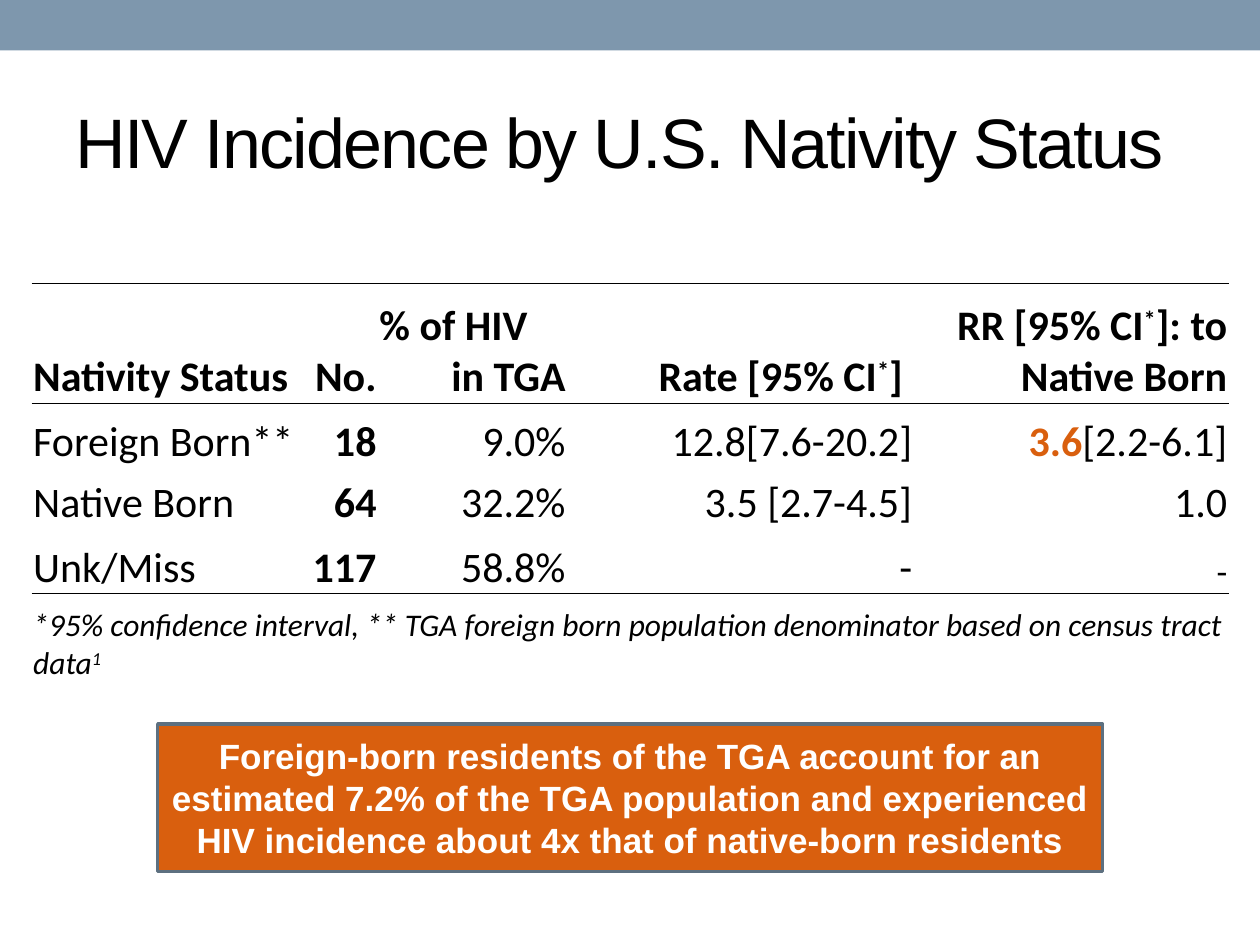
import pptx
import pptx.dml.color
import pptx.enum.shapes
import pptx.enum.text
import pptx.oxml.ns
import pptx.util
from lxml import etree

Cm = pptx.util.Cm
Pt = pptx.util.Pt
RGBColor = pptx.dml.color.RGBColor
Align = pptx.enum.text.PP_ALIGN
Anchor = pptx.enum.text.MSO_ANCHOR
qn = pptx.oxml.ns.qn

BLACK = RGBColor(0x00, 0x00, 0x00)
WHITE = RGBColor(0xFF, 0xFF, 0xFF)
ORANGE = RGBColor(0xD9, 0x5F, 0x0E)
BAND_BLUE = RGBColor(0x7E, 0x97, 0xAD)
OUTLINE_BLUE = RGBColor(0x5D, 0x70, 0x80)

SUPER = "superscript"
HIGHLIGHT = "highlight"

COLUMN_WIDTHS = [5.51, 1.47, 3.81, 6.99, 6.35]
ROW_HEIGHTS = [2.41, 1.3, 1.24, 1.3, 1.8]
RULED_BOUNDARIES = {0, 1, 4}
HEADER = [
    "Nativity Status",
    "No.",
    "% of HIV\nin TGA",
    [("Rate [95% CI", None), ("*", SUPER), ("] ", None)],
    [("RR [95% CI", None), ("*", SUPER), ("]: to Native Born", None)],
]
ROWS = [
    ["Foreign Born**", "18", "9.0%", "12.8[7.6-20.2]",
     [("3.6", HIGHLIGHT), ("[2.2-6.1]", None)]],
    ["Native Born", "64", "32.2%", "3.5 [2.7-4.5]", "1.0"],
    ["Unk/Miss", "117", "58.8%", "-", "-"],
]
FOOTNOTE = [
    ("*95% confidence interval, ** TGA foreign born population "
     "denominator based on census tract data", None),
    ("1", SUPER),
]


class SlideBuilder:
    heading_font = "Arial"
    table_font = "Calibri"

    def __init__(self, slide):
        self.slide = slide

    def style(self, run, font, size, color=BLACK, bold=False, italic=False):
        run.font.name = font
        run.font.size = Pt(size)
        run.font.color.rgb = color
        run.font.bold = bold
        run.font.italic = italic

    def box(self, left, top, width, height, fill, line=None):
        shape = self.slide.shapes.add_shape(
            pptx.enum.shapes.MSO_SHAPE.RECTANGLE,
            Cm(left), Cm(top), Cm(width), Cm(height))
        shape.shadow.inherit = False
        shape.fill.solid()
        shape.fill.fore_color.rgb = fill
        if line is None:
            shape.line.fill.background()
        else:
            shape.line.color.rgb = line
            shape.line.width = Pt(2)
        return shape

    def title(self, text, left, top, width, height):
        text_frame = self.slide.shapes.add_textbox(
            Cm(left), Cm(top), Cm(width), Cm(height)).text_frame
        text_frame.word_wrap = True
        text_frame.vertical_anchor = Anchor.MIDDLE
        text_frame.text = text
        run = text_frame.paragraphs[0].runs[0]
        self.style(run, self.heading_font, 40)
        run.font._element.set("spc", "-100")

    def callout(self, text, left, top, width, height):
        shape = self.box(left, top, width, height, ORANGE, OUTLINE_BLUE)
        text_frame = shape.text_frame
        text_frame.word_wrap = True
        text_frame.vertical_anchor = Anchor.MIDDLE
        text_frame.text = text
        paragraph = text_frame.paragraphs[0]
        paragraph.alignment = Align.CENTER
        self.style(paragraph.runs[0], self.heading_font, 20, WHITE, True)

    def borders(self, cell, row):
        properties = cell._tc.get_or_add_tcPr()
        ruled = {"L": False, "R": False,
                 "T": row in RULED_BOUNDARIES,
                 "B": row + 1 in RULED_BOUNDARIES}
        for side, visible in ruled.items():
            line = etree.SubElement(properties, qn("a:ln" + side), w="6350")
            if visible:
                fill = etree.SubElement(line, qn("a:solidFill"))
                etree.SubElement(fill, qn("a:srgbClr"), val=str(BLACK))
            else:
                etree.SubElement(line, qn("a:noFill"))

    def cell(self, cell, row, content, alignment, size=24, bold=False, italic=False):
        self.borders(cell, row)
        cell.fill.background()
        cell.margin_left = cell.margin_right = cell.margin_top = Cm(0.03)
        cell.margin_bottom = Cm(0)
        cell.vertical_anchor = Anchor.BOTTOM
        text_frame = cell.text_frame
        if isinstance(content, str):
            text_frame.text = content
        else:
            for text, _ in content:
                text_frame.paragraphs[0].add_run().text = text
        for paragraph in text_frame.paragraphs:
            paragraph.alignment = alignment
            for run in paragraph.runs:
                self.style(run, self.table_font, size, BLACK, bold, italic)
        if isinstance(content, list):
            for run, (_, effect) in zip(text_frame.paragraphs[0].runs, content):
                if effect == SUPER:
                    run.font._element.set("baseline", "30000")
                elif effect == HIGHLIGHT:
                    run.font.bold = True
                    run.font.color.rgb = ORANGE

    def table(self, left, top):
        table = self.slide.shapes.add_table(
            len(ROW_HEIGHTS), len(COLUMN_WIDTHS), Cm(left), Cm(top),
            Cm(sum(COLUMN_WIDTHS)), Cm(sum(ROW_HEIGHTS))).table
        table.first_row = False
        table.horz_banding = False
        for column, width in zip(table.columns, COLUMN_WIDTHS):
            column.width = Cm(width)
        for row, height in zip(table.rows, ROW_HEIGHTS):
            row.height = Cm(height)
        for row, values in enumerate([HEADER] + ROWS):
            for column, content in enumerate(values):
                alignment = Align.RIGHT if column else Align.LEFT
                self.cell(table.cell(row, column), row, content, alignment,
                          bold=row == 0 or column == 1)
        table.cell(0, 2).text_frame.paragraphs[0].alignment = Align.LEFT
        last_dash = table.cell(3, 4).text_frame.paragraphs[0].runs[0]
        last_dash.font.size = Pt(20)
        footnote_row = len(ROW_HEIGHTS) - 1
        footnote = table.cell(footnote_row, 0)
        footnote.merge(table.cell(footnote_row, len(COLUMN_WIDTHS) - 1))
        for column in range(1, len(COLUMN_WIDTHS)):
            self.cell(table.cell(footnote_row, column), footnote_row, "", Align.LEFT)
        self.cell(footnote, footnote_row, FOOTNOTE, Align.LEFT, 18, italic=True)


def main():
    presentation = pptx.Presentation()
    presentation.slide_width = Cm(25.4)
    presentation.slide_height = Cm(19.05)
    slide = presentation.slides.add_slide(presentation.slide_layouts[6])
    builder = SlideBuilder(slide)
    builder.box(0, 0, 25.4, 1.02, BAND_BLUE)
    builder.title("HIV Incidence by U.S. Nativity Status", 1.27, 1.47, 22.86, 2.74)
    builder.callout(
        "Foreign-born residents of the TGA account for an estimated 7.2% of the "
        "TGA population and experienced HIV incidence about 4x that of "
        "native-born residents", 3.18, 14.6, 19.05, 2.97)
    builder.table(0.64, 5.72)
    presentation.save("out.pptx")


if __name__ == "__main__":
    main()
